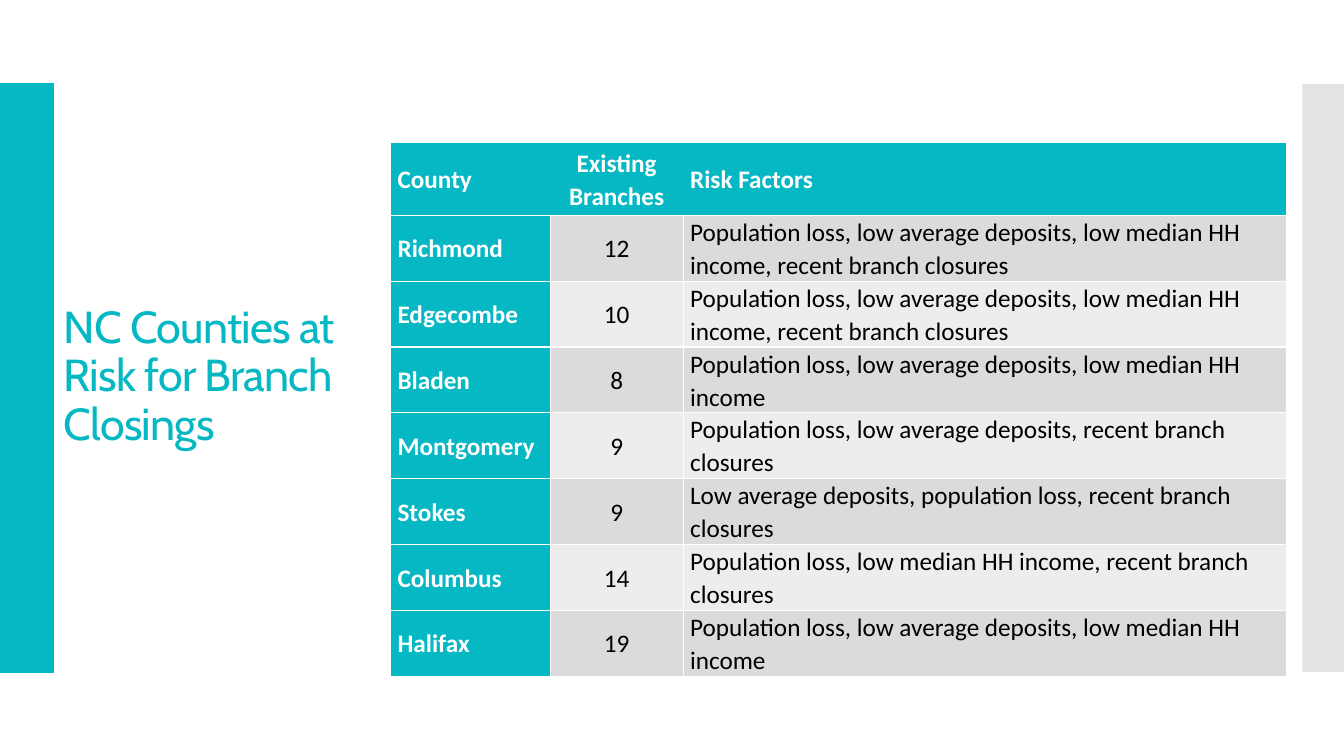
from lxml import etree
from pptx import Presentation
from pptx.dml.color import RGBColor
from pptx.enum.shapes import MSO_SHAPE
from pptx.enum.text import MSO_ANCHOR, PP_ALIGN
from pptx.oxml.ns import qn
from pptx.util import Pt

RECTANGLE = MSO_SHAPE.RECTANGLE
MIDDLE = MSO_ANCHOR.MIDDLE
LEFT, CENTER = PP_ALIGN.LEFT, PP_ALIGN.CENTER

HEADLINE = "NC Counties at Risk for Branch Closings"
HEADINGS = ("County", "Existing Branches", "Risk Factors")
COUNTIES = [
    ("Richmond", 12, "Population loss, low average deposits, low median HH income, recent branch closures"),
    ("Edgecombe", 10, "Population loss, low average deposits, low median HH income, recent branch closures"),
    ("Bladen", 8, "Population loss, low average deposits, low median HH income"),
    ("Montgomery", 9, "Population loss, low average deposits, recent branch closures"),
    ("Stokes", 9, "Low average deposits, population loss, recent branch closures"),
    ("Columbus", 14, "Population loss, low median HH income, recent branch closures"),
    ("Halifax", 19, "Population loss, low average deposits, low median HH income"),
]
TEAL, WHITE, BLACK, GRAY = "06B8C3", "FFFFFF", "000000", "C8C8C8"
BANDS = ("DBDBDB", "EDEDED")
SLIDE_WIDTH, SLIDE_HEIGHT = 960, 540
BAND_TOP, BAND_HEIGHT = 60, 420
TABLE_LEFT, TABLE_TOP = 279, 101.8
COLUMN_WIDTHS = (114, 95, 431)
HEADING_HEIGHT, COUNTY_HEIGHT = 52, 47


def paint(color_format, color):
    color_format.rgb = RGBColor.from_string(color)


def write(frame, text, size=18, font="Calibri", color=BLACK, bold=False,
          align=LEFT, line_spacing=1.07, tracking=None):
    frame.word_wrap = True
    paragraph = frame.paragraphs[0]
    paragraph.alignment = align
    paragraph.line_spacing = line_spacing
    run = paragraph.add_run()
    run.text = text
    run.font.size = Pt(size)
    run.font.name = font
    run.font.bold = bold
    paint(run.font.color, color)
    if tracking is not None:
        run.font._element.set("spc", str(round(tracking * 100)))


def add_side_band(slide, left, width, color, opacity=None):
    band = slide.shapes.add_shape(
        RECTANGLE, Pt(left), Pt(BAND_TOP), Pt(width), Pt(BAND_HEIGHT))
    band.shadow.inherit = False
    band.fill.solid()
    paint(band.fill.fore_color, color)
    if opacity is None:
        band.line.width = Pt(0.85)
        paint(band.line.color, color)
    else:
        band.line.fill.background()
        tint = band._element.spPr.find(qn("a:solidFill"))[0]
        etree.SubElement(tint, qn("a:alpha"), val=str(opacity * 1000))


def set_borders(cell, sides):
    properties = cell._tc.get_or_add_tcPr()
    for side in "LRTB":
        border = etree.SubElement(properties, qn(f"a:ln{side}"), w=str(Pt(1)))
        if side in sides:
            fill = etree.SubElement(border, qn("a:solidFill"))
            etree.SubElement(fill, qn("a:srgbClr"), val=WHITE)
        else:
            etree.SubElement(border, qn("a:noFill"))


def add_county_table(slide):
    rows = [HEADINGS, *COUNTIES]
    heights = [HEADING_HEIGHT] + [COUNTY_HEIGHT] * len(COUNTIES)
    table = slide.shapes.add_table(
        len(rows), len(HEADINGS), Pt(TABLE_LEFT), Pt(TABLE_TOP),
        Pt(sum(COLUMN_WIDTHS)), Pt(sum(heights))).table
    for column, width in zip(table.columns, COLUMN_WIDTHS):
        column.width = Pt(width)
    for row, height in zip(table.rows, heights):
        row.height = Pt(height)
    heading_sides = ("LTB", "TB", "RTB")
    for r, row in enumerate(rows):
        for c, value in enumerate(row):
            cell = table.cell(r, c)
            heading = r == 0 or c == 0
            cell.vertical_anchor = MIDDLE
            cell.margin_left = cell.margin_right = Pt(5)
            cell.margin_top = cell.margin_bottom = 0
            set_borders(cell, heading_sides[c] if r == 0 else "LRTB")
            cell.fill.solid()
            paint(cell.fill.fore_color, TEAL if heading else BANDS[(r - 1) % 2])
            write(cell.text_frame, str(value), bold=heading,
                  color=WHITE if heading else BLACK,
                  align=CENTER if c == 1 else LEFT)


def main():
    deck = Presentation()
    deck.slide_width, deck.slide_height = Pt(SLIDE_WIDTH), Pt(SLIDE_HEIGHT)
    slide = deck.slides.add_slide(deck.slide_layouts[5])
    add_side_band(slide, 0, 38.4, TEAL)
    add_side_band(slide, 930.2, 29.8, GRAY, opacity=50)
    title = slide.shapes.title
    title.left, title.top, title.width, title.height = map(Pt, (38.4, 88.5, 233, 362))
    title.text_frame.vertical_anchor = MIDDLE
    write(title.text_frame, HEADLINE, size=32, font="Cabin", color=TEAL,
          line_spacing=0.9, tracking=-0.6)
    add_county_table(slide)
    deck.save("out.pptx")


if __name__ == "__main__":
    main()
